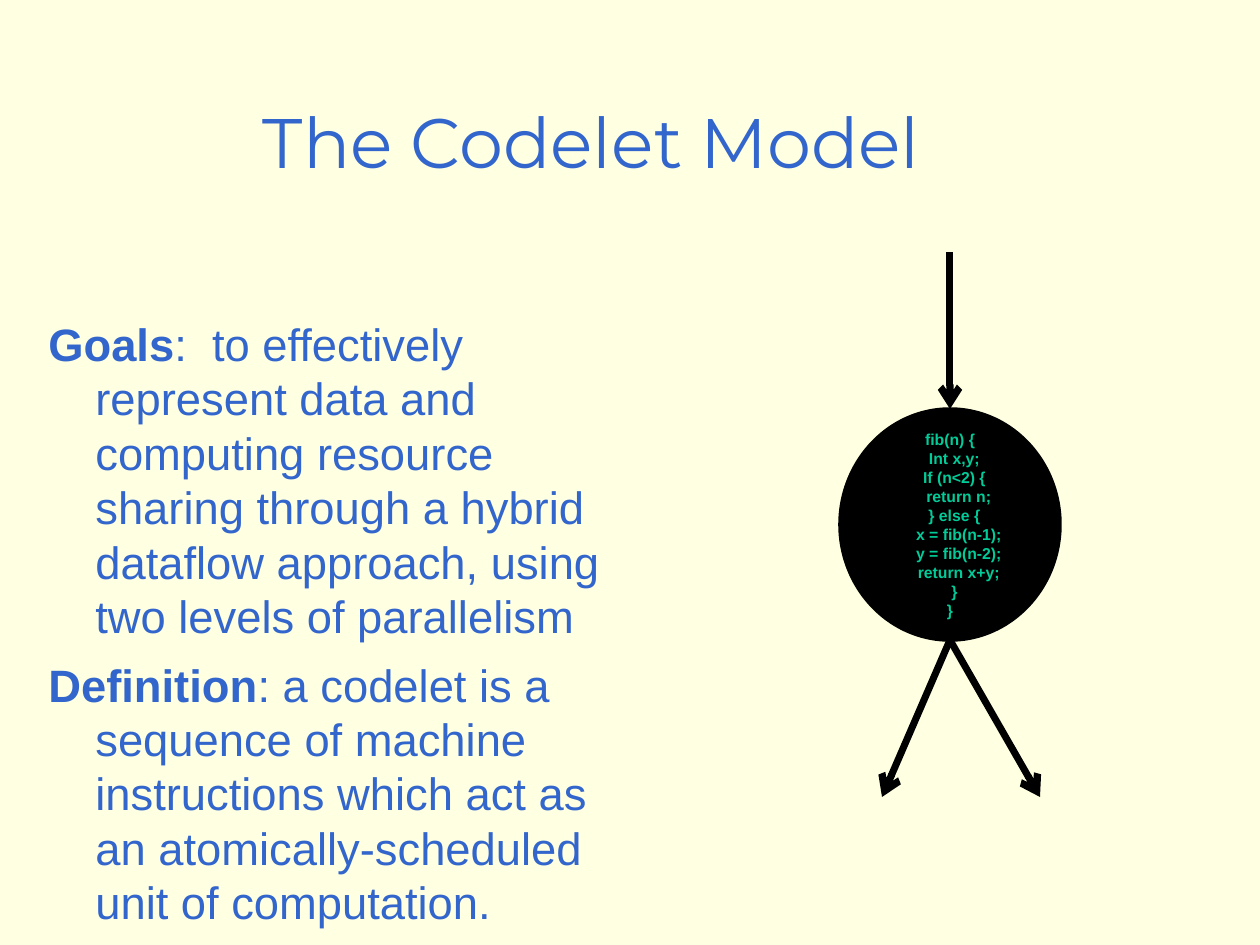
from lxml.etree import SubElement
from pptx import Presentation
from pptx.dml.color import RGBColor
from pptx.enum.shapes import MSO_CONNECTOR, MSO_SHAPE
from pptx.enum.text import MSO_ANCHOR, PP_ALIGN
from pptx.oxml.ns import qn
from pptx.util import Emu, Pt

EMU_PER_PX = 914400 / 126
BACKGROUND, BLUE, GREEN, BLACK = "FFFFE1", "3366CC", "00CC99", "000000"

STATEMENTS = [
    ("Goals", ":  to effectively represent data and computing resource sharing "
              "through a hybrid dataflow approach, using two levels of parallelism"),
    ("Definition", ": a codelet is a sequence of machine instructions which act as "
                   "an atomically-scheduled unit of computation."),
]
CODE = """fib(n) {
  Int x,y;
  If (n<2) {
    return n;
  } else {
    x = fib(n-1);
    y = fib(n-2);
    return x+y;
  }
}"""


def px(length):
    return Emu(round(length * EMU_PER_PX))


def color(hex_string):
    return RGBColor.from_string(hex_string)


def add_run(paragraph, text, size, hex_string, font="Arial", bold=False):
    run = paragraph.add_run()
    run.text = text
    run.font.name = font
    run.font.size = Pt(size)
    run.font.bold = bold
    run.font.color.rgb = color(hex_string)


def paragraphs(text_frame, count):
    """Yield the existing first paragraph, then new ones, up to count."""
    yield text_frame.paragraphs[0]
    for _ in range(count - 1):
        yield text_frame.add_paragraph()


def add_text_box(slide, box):
    text_frame = slide.shapes.add_textbox(*map(px, box)).text_frame
    text_frame.word_wrap = True
    return text_frame


def add_title(slide, box):
    text_frame = add_text_box(slide, box)
    text_frame.vertical_anchor = MSO_ANCHOR.BOTTOM
    paragraph = text_frame.paragraphs[0]
    paragraph.alignment = PP_ALIGN.CENTER
    add_run(paragraph, "The Codelet Model", 40, BLUE, font="Montserrat")


def add_statements(slide, box):
    text_frame = add_text_box(slide, box)
    hanging_indent = px(47)
    rows = zip(paragraphs(text_frame, len(STATEMENTS)), STATEMENTS)
    for index, (paragraph, (term, explanation)) in enumerate(rows):
        properties = paragraph._p.get_or_add_pPr()
        properties.set("marL", str(hanging_indent))
        properties.set("indent", str(-hanging_indent))
        if index:
            paragraph.space_before = Pt(8)
        add_run(paragraph, term, 25.9, BLUE, bold=True)
        add_run(paragraph, explanation, 25.9, BLUE)


def add_code_circle(slide, box):
    circle = slide.shapes.add_shape(MSO_SHAPE.OVAL, *map(px, box))
    circle.shadow.inherit = False
    circle.fill.solid()
    circle.fill.fore_color.rgb = color(BLACK)
    circle.line.color.rgb = color(BLACK)
    circle.line.width = Pt(2)
    text_frame = circle.text_frame
    text_frame.word_wrap = False
    text_frame.vertical_anchor = MSO_ANCHOR.MIDDLE
    lines = CODE.split("\n")
    for paragraph, line in zip(paragraphs(text_frame, len(lines)), lines):
        paragraph.alignment = PP_ALIGN.CENTER
        add_run(paragraph, line, 9, GREEN, bold=True)


def add_arrow(slide, start, end):
    arrow = slide.shapes.add_connector(
        MSO_CONNECTOR.STRAIGHT, *map(px, (*start, *end)))
    arrow.line.color.rgb = color(BLACK)
    arrow.line.width = Pt(4)
    SubElement(arrow.line._get_or_add_ln(), qn("a:tailEnd"), type="arrow")
    SubElement(arrow._element.spPr, qn("a:effectLst"))


def add_codelet(slide, box):
    """Code circle with one arrow coming in and two going out."""
    left, top, width, height = box
    arrow_height = 157
    center, circle_top, bottom = left + width // 2, top + arrow_height, top + height
    circle_bottom = bottom - arrow_height
    add_code_circle(slide, (left, circle_top, width, circle_bottom - circle_top))
    add_arrow(slide, (center, top), (center, circle_top))
    for offset in (90, -68):
        add_arrow(slide, (center, circle_bottom), (center + offset, bottom))


def main():
    presentation = Presentation()
    presentation.slide_width, presentation.slide_height = px(1260), px(945)
    slide = presentation.slides.add_slide(presentation.slide_layouts[6])
    slide.background.fill.solid()
    slide.background.fill.fore_color.rgb = color(BACKGROUND)
    add_title(slide, (56, 9, 1071, 180))
    add_statements(slide, (36, 310, 602, 625))
    add_codelet(slide, (840, 252, 220, 545))
    presentation.save("out.pptx")


if __name__ == "__main__":
    main()
